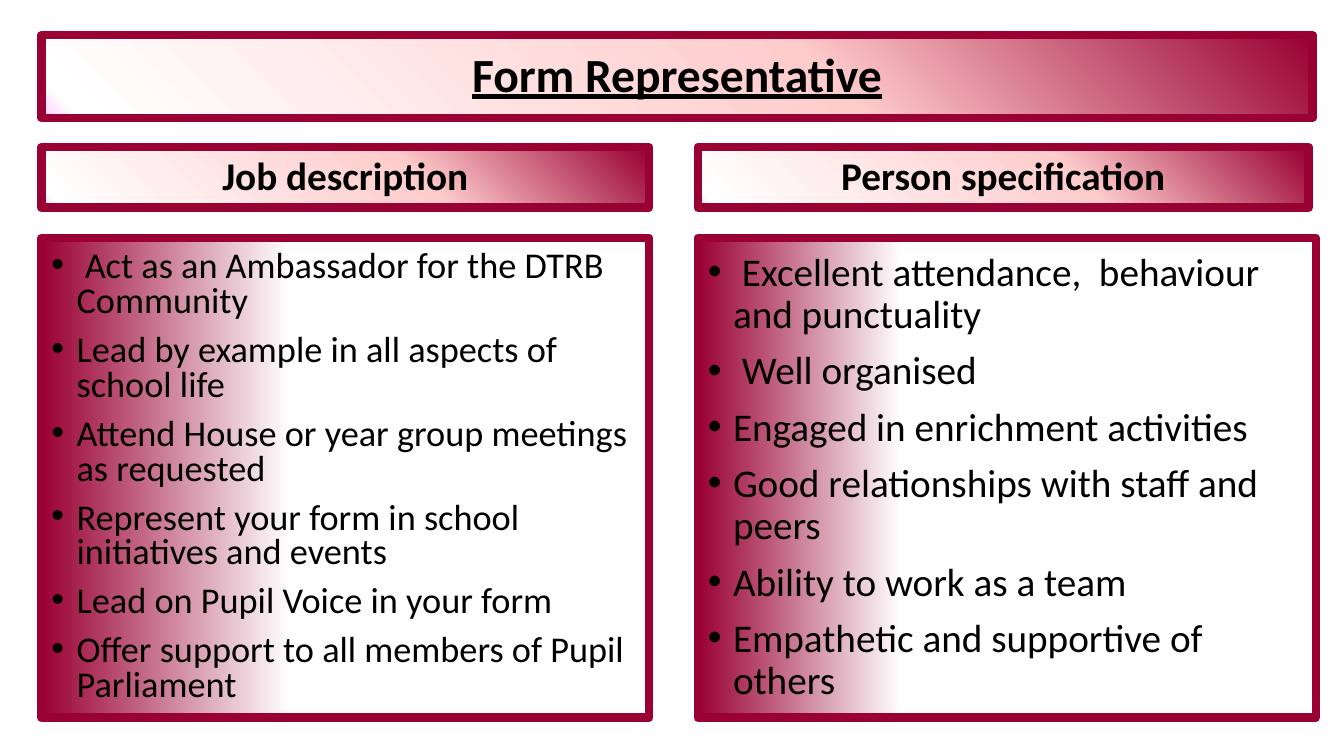
from lxml.etree import SubElement
from pptx import Presentation
from pptx.dml.color import RGBColor as RGB
from pptx.enum.text import MSO_ANCHOR, MSO_AUTO_SIZE, PP_ALIGN
from pptx.oxml import parse_xml
from pptx.oxml.ns import nsdecls, qn
from pptx.util import Inches, Pt

# Content
TITLE = "Form Representative"
COLUMNS = [
    ("Job description", [
        " Act as an Ambassador for the DTRB Community",
        "Lead by example in all aspects of school life",
        "Attend House or year group meetings as requested",
        "Represent your form in school initiatives and events",
        "Lead on Pupil Voice in your form",
        "Offer support to all members of Pupil Parliament",
    ]),
    ("Person specification", [
        " Excellent attendance,  behaviour and punctuality",
        " Well organised",
        "Engaged in enrichment activities",
        "Good relationships with staff and peers",
        "Ability to work as a team",
        "Empathetic and supportive of others",
    ]),
]

# Look
COLORS = {"wine": "990033", "rose": "FFCCCC", "white": "FFFFFF",
          "pink": "FFCCFF", "text": "000000"}
GLOW = [(0, "wine"), (39, "rose"), (97, "white"), (100, "pink")]
CORNER = ('<a:path path="circle">'
          '<a:fillToRect l="100000" t="0" r="0" b="100000"/></a:path>')
ACROSS = '<a:lin ang="0" scaled="1"/>'
HEAD_FONT = {"name": "Calibri", "size": Pt(28), "bold": True}
TITLE_FONT = {**HEAD_FONT, "size": Pt(34), "underline": True}
LIST_FONT = {"name": "Calibri", "bold": False}

# Grid in inches: rows are (top, height); columns are
# (left, heading width, list width, list size, line spacing, fade end)
TITLE_ROW, HEAD_ROW, LIST_ROW = (0.35, 0.82), (1.46, 0.6), (2.36, 4.76)
GRID = [(0.41, 6.03, 6.03, 25.9, 0.8, 41),
        (6.92, 6.06, 6.13, 28, 0.9, 33)]
TITLE_WIDTH = 12.61


def frame(sp, left, width, row, stops, direction):
    """Place a box, give it its gradient, border and text margins."""
    top, height = row
    sp.left, sp.top, sp.width, sp.height = map(Inches, (left, top, width, height))
    sp.fill.gradient()
    marks = "".join(f'<a:gs pos="{pos * 1000}"><a:srgbClr val="{COLORS[c]}"/></a:gs>'
                    for pos, c in stops)
    spPr = sp._element.spPr
    spPr.replace(spPr.find(qn("a:gradFill")), parse_xml(
        f'<a:gradFill {nsdecls("a")} rotWithShape="1">'
        f'<a:gsLst>{marks}</a:gsLst>{direction}</a:gradFill>'))
    sp.line.color.rgb = RGB.from_string(COLORS["wine"])
    sp.line.width = Pt(6)
    tf = sp.text_frame
    settings = {"word_wrap": True, "auto_size": MSO_AUTO_SIZE.NONE,
                "vertical_anchor": MSO_ANCHOR.MIDDLE,
                "margin_left": Inches(0.1), "margin_right": Inches(0.1),
                "margin_top": Inches(0.05), "margin_bottom": Inches(0.05)}
    for key, value in settings.items():
        setattr(tf, key, value)


def write(sp, lines, font, spacing, bullets=False):
    """Fill a box with centred headings or bulleted lines."""
    tf = sp.text_frame
    for i, line in enumerate(lines):
        p = tf.add_paragraph() if i else tf.paragraphs[0]
        pPr = p._p.get_or_add_pPr()
        indent = Inches(0.25) if bullets else 0
        pPr.set("marL", str(indent))
        pPr.set("indent", str(-indent))
        if bullets:
            SubElement(SubElement(pPr, qn("a:buClr")), qn("a:srgbClr"),
                       val=COLORS["text"])
            SubElement(pPr, qn("a:buFont"), typeface="Arial")
            SubElement(pPr, qn("a:buChar"), char="•")
        else:
            SubElement(pPr, qn("a:buNone"))
        p.alignment = PP_ALIGN.LEFT if bullets else PP_ALIGN.CENTER
        p.line_spacing = spacing
        p.space_before = Pt(10 if i else 0)
        p.space_after = Pt(0)
        r = p.add_run()
        r.text = line
        for key, value in font.items():
            setattr(r.font, key, value)
        r.font.color.rgb = RGB.from_string(COLORS["text"])


def main():
    prs = Presentation()
    prs.slide_width, prs.slide_height = Inches(13.33), Inches(7.5)
    s = prs.slides.add_slide(prs.slide_layouts.get_by_name("Comparison"))
    title, *boxes = s.placeholders

    # Title bar
    frame(title, GRID[0][0], TITLE_WIDTH, TITLE_ROW, GLOW, CORNER)
    write(title, [TITLE], TITLE_FONT, 0.9)

    # Heading and list of each column
    for (heading, items), cell, head, body in zip(COLUMNS, GRID, boxes[::2], boxes[1::2]):
        left, head_w, list_w, size, spacing, fade = cell
        frame(head, left, head_w, HEAD_ROW, GLOW, CORNER)
        write(head, [heading], HEAD_FONT, 0.9)
        stops = [(0, "wine"), (fade, "white"), (100, "white")]
        frame(body, left, list_w, LIST_ROW, stops, ACROSS)
        write(body, items, {**LIST_FONT, "size": Pt(size)}, spacing, bullets=True)

    prs.save("out.pptx")


if __name__ == "__main__":
    main()
